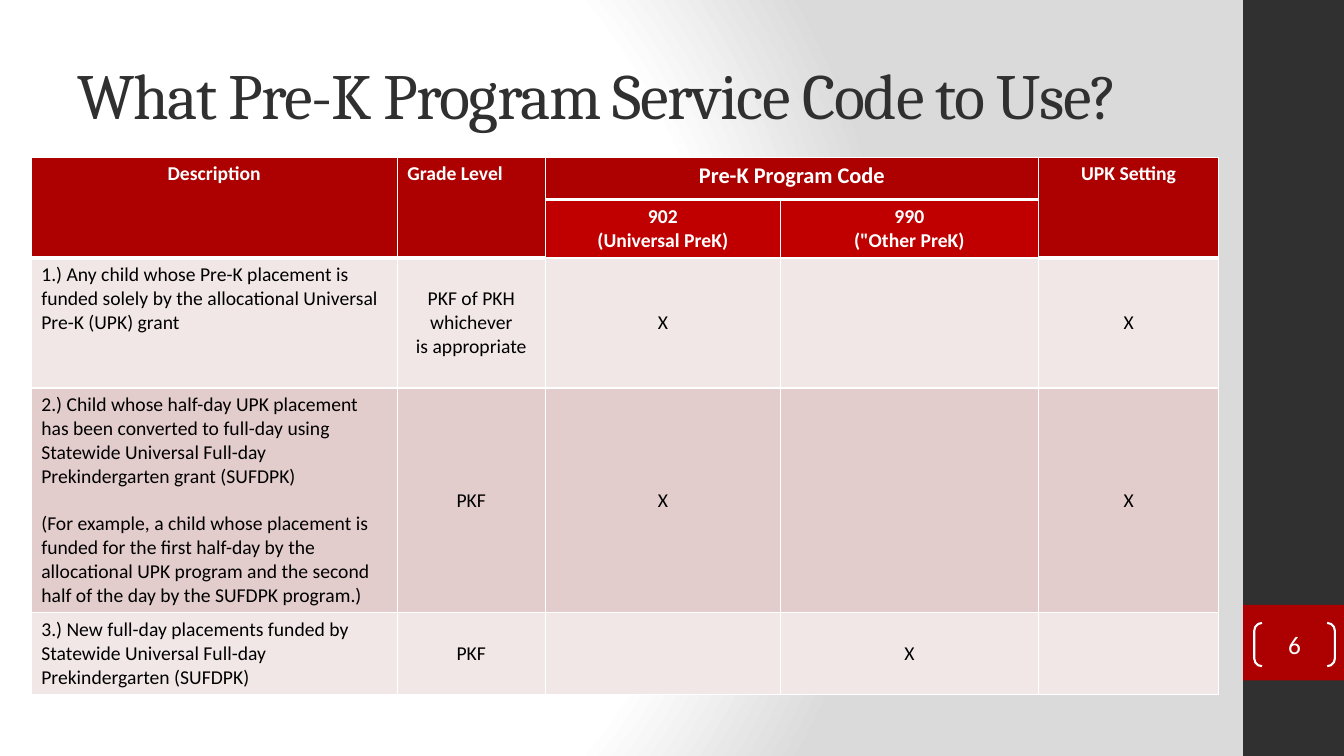
from dataclasses import dataclass

import pptx
import pptx.dml.color
import pptx.enum.shapes
import pptx.enum.text
import pptx.oxml
import pptx.oxml.ns
import pptx.util

Inches = pptx.util.Inches
Pt = pptx.util.Pt
Align = pptx.enum.text.PP_ALIGN
Anchor = pptx.enum.text.MSO_ANCHOR
Shape = pptx.enum.shapes.MSO_SHAPE


@dataclass(frozen=True)
class Theme:
    dark: str = "303030"
    red: str = "AD0101"
    subhead: str = "C00000"
    white: str = "FFFFFF"
    black: str = "000000"
    backdrop: str = "DADADA"
    bands: tuple = ("F1E7E7", "E3CCCC")
    heading_font: str = "Cambria"
    body_font: str = "Calibri"
    title_size: int = 46
    number_size: int = 18
    group_size: int = 16
    body_size: int = 14


THEME = Theme()
COLUMNS = (3.63, 1.47, 2.33, 2.56, 1.79)
ROWS = (0.42, 0.58, 1.29, 2.23, 0.81)
HEADERS = (
    # row, column, last row, last column, text, alignment, size
    (0, 0, 1, 0, "Description", Align.CENTER, THEME.body_size),
    (0, 1, 1, 1, "Grade Level", Align.LEFT, THEME.body_size),
    (0, 2, 0, 3, "Pre-K Program Code", Align.CENTER, THEME.group_size),
    (0, 4, 1, 4, "UPK Setting", Align.CENTER, THEME.body_size),
)
CODES = {2: "902\n(Universal PreK)", 3: "990\n(\"Other PreK)"}
PLACEMENTS = (
    ("1.) Any child whose Pre-K placement is funded solely by the "
     "allocational Universal Pre-K (UPK) grant",
     "PKF of PKH whichever is\u00a0appropriate", "X", "", "X"),
    ("2.) Child whose half-day UPK placement has been converted to full-day "
     "using Statewide Universal Full-day Prekindergarten grant (SUFDPK)\n"
     "(For example, a child whose placement is funded for the first half-day "
     "by the allocational UPK program and the second half of the day by the "
     "SUFDPK program.)",
     "PKF", "X", "", "X"),
    ("3.) New full-day placements funded by Statewide Universal Full-day "
     "Prekindergarten (SUFDPK)",
     "PKF", "", "X", ""),
)


def rgb(color):
    return pptx.dml.color.RGBColor.from_string(color)


def write(frame, text, *, size=THEME.body_size, color=THEME.black,
          font=THEME.body_font, bold=False, align=Align.LEFT,
          anchor=Anchor.TOP, gap=0, spacing=0):
    """Fill a text frame, one paragraph per line, with gap points between."""
    frame.word_wrap = True
    frame.vertical_anchor = anchor
    for index, line in enumerate(text.split("\n")):
        para = frame.add_paragraph() if index else frame.paragraphs[0]
        para.alignment = align
        if index and gap:
            para.space_before = Pt(gap)
        span = para.add_run()
        span.text = line
        span.font.size = Pt(size)
        span.font.name = font
        span.font.bold = bold
        span.font.color.rgb = rgb(color)
        if spacing:
            span.font._element.set("spc", str(spacing * 100))


def add_block(page, box, kind=Shape.RECTANGLE, fill=None, line=None):
    block = page.shapes.add_shape(kind, *map(Inches, box))
    block.shadow.inherit = False
    if fill:
        block.fill.solid()
        block.fill.fore_color.rgb = rgb(fill)
    else:
        block.fill.background()
    if line:
        block.line.color.rgb = rgb(line)
        block.line.width = Pt(1.5)
    else:
        block.line.fill.background()
    return block


def paint_background(page):
    page.background.fill.gradient()
    gradient = page.element.find(".//" + pptx.oxml.ns.qn("a:gradFill"))
    stops = ((0, THEME.white), (75, THEME.white), (100, THEME.backdrop))
    marks = "".join(
        f'<a:gs pos="{place * 1000}"><a:srgbClr val="{color}"/></a:gs>'
        for place, color in stops)
    radial = pptx.oxml.parse_xml(
        f'<a:gradFill {pptx.oxml.ns.nsdecls("a")} rotWithShape="1">'
        f'<a:gsLst>{marks}</a:gsLst><a:path path="circle">'
        '<a:fillToRect l="20000" t="50000" r="100000" b="50000"/>'
        '</a:path></a:gradFill>')
    gradient.getparent().replace(gradient, radial)


def add_sidebar(page, box, number):
    left, top, width, height = box
    add_block(page, box, fill=THEME.dark)
    add_block(page, (left, top + 6, width, 0.75), fill=THEME.red)
    bracket = add_block(page, (left + 0.11, top + 6.18, 0.8, 0.43),
                        Shape.DOUBLE_BRACKET, line=THEME.white)
    bracket.adjustments[0] = 0.179
    frame = bracket.text_frame
    frame.margin_left = frame.margin_right = 0
    frame.margin_top = frame.margin_bottom = 0
    write(frame, number, size=THEME.number_size, color=THEME.white,
          align=Align.CENTER, anchor=Anchor.MIDDLE)


def add_title(page, box, text):
    title = page.shapes.add_textbox(*map(Inches, box))
    write(title.text_frame, text, size=THEME.title_size, color=THEME.dark,
          font=THEME.heading_font, anchor=Anchor.MIDDLE, spacing=-1)


def style_cell(cell, fill, bottom=1):
    """Give a cell its fill and white borders, widths in points."""
    cell.fill.solid()
    cell.fill.fore_color.rgb = rgb(fill)
    properties = cell._tc.get_or_add_tcPr()
    widths = {"lnL": 1, "lnR": 1, "lnT": 1, "lnB": bottom}
    for index, (side, width) in enumerate(widths.items()):
        properties.insert(index, pptx.oxml.parse_xml(
            f'<a:{side} {pptx.oxml.ns.nsdecls("a")} w="{Pt(width)}">'
            f'<a:solidFill><a:srgbClr val="{THEME.white}"/></a:solidFill>'
            f'</a:{side}>'))


def add_code_table(page, box):
    table = page.shapes.add_table(
        len(ROWS), len(COLUMNS), *map(Inches, box)).table
    table.first_row = table.horz_banding = False
    for column, width in zip(table.columns, COLUMNS):
        column.width = Inches(width)
    for row, height in zip(table.rows, ROWS):
        row.height = Inches(height)

    for top, left, bottom, right, text, align, size in HEADERS:
        for row in range(top, bottom + 1):
            for column in range(left, right + 1):
                style_cell(table.cell(row, column), THEME.red, bottom=3)
        cell = table.cell(top, left)
        cell.merge(table.cell(bottom, right))
        write_cell(cell, text, size=size, color=THEME.white, bold=True,
                   align=align)
    for column, text in CODES.items():
        cell = table.cell(1, column)
        style_cell(cell, THEME.subhead)
        write_cell(cell, text, color=THEME.white, bold=True,
                   align=Align.CENTER)

    for index, placement in enumerate(PLACEMENTS):
        for column, text in enumerate(placement):
            cell = table.cell(index + 2, column)
            style_cell(cell, THEME.bands[index % 2])
            if column == 0:
                write_cell(cell, text, gap=17)
            elif text:
                write_cell(cell, text, align=Align.CENTER,
                           anchor=Anchor.MIDDLE)


def write_cell(cell, text, anchor=Anchor.TOP, **style):
    write(cell.text_frame, text, **style)
    cell.vertical_anchor = anchor


def main():
    deck = pptx.Presentation()
    deck.slide_width, deck.slide_height = Inches(13.33), Inches(7.5)
    page = deck.slides.add_slide(deck.slide_layouts[6])
    paint_background(page)
    add_sidebar(page, (12.33, 0, 1, 7.5), "6")
    add_title(page, (0.67, 0.3, 11.11, 1.25),
              "What Pre-K Program Service Code to Use?")
    add_code_table(page, (0.31, 1.56, sum(COLUMNS), sum(ROWS)))
    deck.save("out.pptx")


if __name__ == "__main__":
    main()
